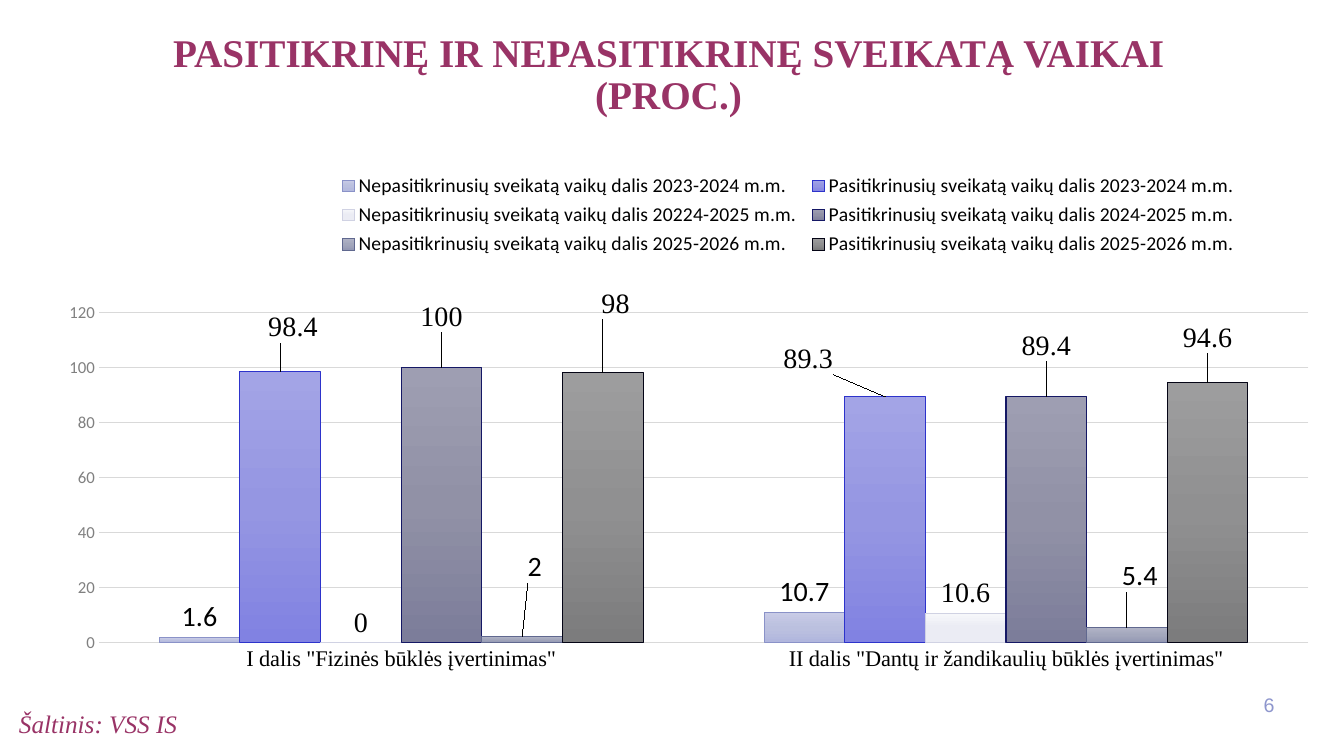
from copy import deepcopy
from dataclasses import dataclass

from lxml.etree import SubElement
from pptx import Presentation
from pptx.chart.data import CategoryChartData
from pptx.dml.color import RGBColor
from pptx.enum.chart import (XL_CHART_TYPE, XL_LABEL_POSITION,
                             XL_LEGEND_POSITION, XL_TICK_MARK)
from pptx.enum.text import MSO_ANCHOR, PP_ALIGN
from pptx.oxml import parse_xml
from pptx.oxml.ns import nsdecls, qn
from pptx.util import Inches, Pt

SERIF, SANS = "Times New Roman", "Calibri"
PLUM = RGBColor(0x99, 0x33, 0x66)
LAVENDER = RGBColor(0x8E, 0x96, 0xCD)
BLACK = RGBColor(0, 0, 0)
GREY = RGBColor(0x80, 0x80, 0x80)
GRID = RGBColor(0xD9, 0xD9, 0xD9)


@dataclass
class Series:
    name: str
    values: tuple
    gradient: tuple[RGBColor, RGBColor, RGBColor]
    line: RGBColor
    label_font: str
    label_shifts: tuple = ()  # (x, y) per point, as fractions of the chart


def shades(*codes: str) -> tuple:
    return tuple(RGBColor.from_string(code) for code in codes)


NOT_CHECKED = "Nepasitikrinusių sveikatą vaikų dalis"
CHECKED = "Pasitikrinusių sveikatą vaikų dalis"
CATEGORIES = ('I dalis "Fizinės būklės įvertinimas"',
              'II dalis "Dantų ir žandikaulių būklės įvertinimas"')
SERIES = (
    Series(f"{NOT_CHECKED} 2023-2024 m.m.", (1.6, 10.7),
           shades("C8CBE6", "BBC0DF", "B1B6DD"), RGBColor(0x8A, 0x92, 0xC8), SANS),
    Series(f"{CHECKED} 2023-2024 m.m.", (98.4, 89.3),
           shades("A3A4E6", "9596E2", "8182E2"), RGBColor(0x2D, 0x33, 0xCB), SERIF,
           ((0.01, -0.04), (-0.06, -0.03))),
    Series(f"{NOT_CHECKED} 20224-2025 m.m.", (0, 10.6),
           shades("F6F7FA", "EBECF4", "E9EAF3"), RGBColor(0xD0, 0xD2, 0xE3), SERIF),
    Series(f"{CHECKED} 2024-2025 m.m.", (100, 89.4),
           shades("9E9EB2", "9191A6", "7C7D9A"), RGBColor(0x15, 0x18, 0x65), SERIF,
           ((0, -0.05), (0, -0.05))),
    Series(f"{NOT_CHECKED} 2025-2026 m.m.", (2, 5.4),
           shades("B0B3C6", "A3A7BC", "9499B4"), RGBColor(0x60, 0x68, 0x8F), SANS,
           ((0.01, -0.08), (0.01, -0.05))),
    Series(f"{CHECKED} 2025-2026 m.m.", (98, 94.6),
           shades("9D9D9E", "909091", "7C7C7D"), RGBColor(0x04, 0x04, 0x15), SERIF,
           ((0.01, -0.08), (0, -0.04))),
)


def style_font(font, name: str, size: float, color: RGBColor) -> None:
    font.name, font.size, font.color.rgb = name, Pt(size), color


def add_text(s, text: str, box: tuple, font: str, size: float, color: RGBColor):
    sp = s.shapes.add_textbox(*map(Inches, box))
    tf = sp.text_frame
    tf.word_wrap = True
    tf.text = text
    style_font(tf.paragraphs[0].runs[0].font, font, size, color)
    return tf


def set_layout(parent, after: str, **settings) -> None:
    """Place a chart part by hand, just after the named child."""
    for old in parent.findall(qn("c:layout")):
        parent.remove(old)
    layout = parse_xml(f"<c:layout {nsdecls('c')}/>")
    manual = SubElement(layout, qn("c:manualLayout"))
    for tag, value in settings.items():
        SubElement(manual, qn(f"c:{tag}")).set("val", str(value))
    if after:
        parent.find(qn(after)).addnext(layout)
    else:
        parent.insert(0, layout)


def style_series(ser, item: Series) -> None:
    # Gradient columns with a thin outline
    fill = ser.format.fill
    fill.gradient()
    fill.gradient_angle = 270
    first = ser._element.find(f".//{qn('a:gs')}")
    first.addnext(deepcopy(first))
    stops = fill.gradient_stops
    for stop, position, color in zip(stops, (0, 0.5, 1), item.gradient):
        stop.position, stop.color.rgb = position, color
    ser.format.line.color.rgb = item.line
    ser.format.line.width = Pt(0.75)
    ser.invert_if_negative = False

    # Value labels
    labels = ser.data_labels
    labels.show_value = True
    labels.position = XL_LABEL_POSITION.OUTSIDE_END
    style_font(labels.font, item.label_font, 20, BLACK)
    for i, (x, y) in enumerate(item.label_shifts):
        label = ser.points[i].data_label
        style_font(label.font, item.label_font, 20, BLACK)
        label.position = XL_LABEL_POSITION.OUTSIDE_END
        node = ser._element.findall(f".//{qn('c:dLbl')}")[i]
        set_layout(node, "c:idx", x=x, y=y)


def add_health_chart(s) -> None:
    data = CategoryChartData()
    data.categories = CATEGORIES
    for item in SERIES:
        data.add_series(item.name, item.values)
    box = map(Inches, (0.51, 1.25, 12.71, 6.1))
    chart = s.shapes.add_chart(XL_CHART_TYPE.COLUMN_CLUSTERED, *box, data).chart
    chart.has_title = False
    style_font(chart.font, SANS, 10, BLACK)
    plot = chart.plots[0]
    plot.gap_width, plot.overlap, plot.vary_by_categories = 150, 0, False
    for ser, item in zip(plot.series, SERIES):
        style_series(ser, item)

    # Axes
    for axis, font, size, color in ((chart.category_axis, SERIF, 16, BLACK),
                                    (chart.value_axis, SANS, 12, GREY)):
        axis.major_tick_mark = axis.minor_tick_mark = XL_TICK_MARK.NONE
        axis.format.line.fill.background()
        style_font(axis.tick_labels.font, font, size, color)
    values = chart.value_axis
    values.minimum_scale, values.maximum_scale, values.major_unit = 0, 120, 20
    values.has_major_gridlines = True
    values.major_gridlines.format.line.color.rgb = GRID
    values.major_gridlines.format.line.width = Pt(0.75)

    # Legend and plot area
    chart.has_legend = True
    legend = chart.legend
    legend.position = XL_LEGEND_POSITION.TOP
    legend.include_in_layout = False
    style_font(legend.font, SANS, 14, BLACK)
    set_layout(legend._element, "c:legendPos", xMode="edge", yMode="edge",
               x=0.22, y=0.07, w=0.71, h=0.15)
    area = chart._chartSpace.find(f".//{qn('c:plotArea')}")
    set_layout(area, "", layoutTarget="inner", xMode="edge", yMode="edge",
               x=0.037, y=0.303, w=0.944, h=0.537)


def main() -> None:
    prs = Presentation()
    prs.slide_width, prs.slide_height = Inches(13.33), Inches(7.5)
    s = prs.slides.add_slide(prs.slide_layouts[5])

    # Title
    title = s.shapes.title
    title.left, title.top = Inches(-0.12), Inches(0.28)
    title.width, title.height = Inches(13.5), Inches(1.38)
    tf = title.text_frame
    tf.text = "PASITIKRINĘ IR NEPASITIKRINĘ SVEIKATĄ VAIKAI\v(PROC.)"
    tf.vertical_anchor = MSO_ANCHOR.TOP
    p = tf.paragraphs[0]
    p.alignment, p.line_spacing = PP_ALIGN.CENTER, 0.9
    for r in p.runs:
        style_font(r.font, SERIF, 28, PLUM)
        r.font.bold = True

    # Source and page number
    tf = add_text(s, "Šaltinis: VSS IS", (0.09, 6.98, 6.3, 0.38), SERIF, 18, PLUM)
    tf.paragraphs[0].runs[0].font.italic = True
    tf = add_text(s, "6", (12.22, 6.79, 0.52, 0.4), "Arial", 14, LAVENDER)
    tf.vertical_anchor = MSO_ANCHOR.MIDDLE
    tf.paragraphs[0].alignment = PP_ALIGN.RIGHT

    add_health_chart(s)
    prs.save("out.pptx")


if __name__ == "__main__":
    main()
